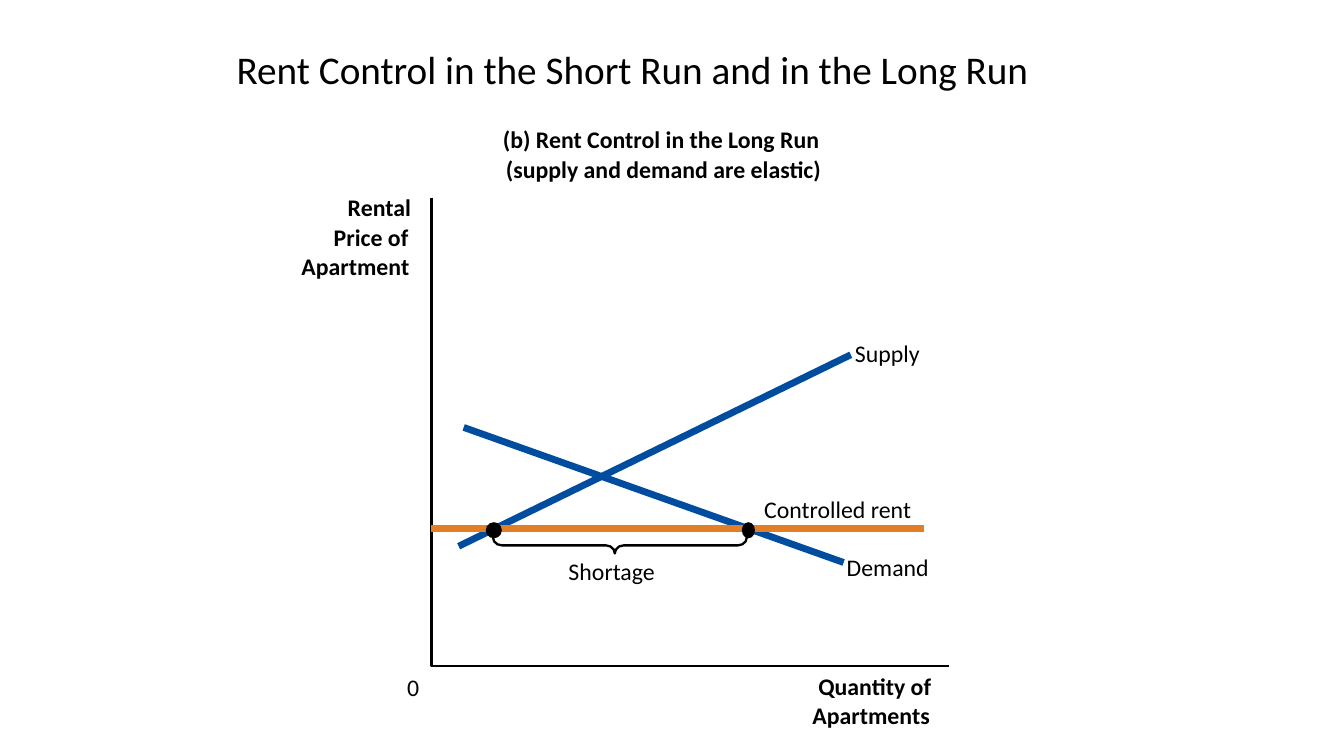
from lxml import etree
from pptx import Presentation
from pptx.dml.color import RGBColor
from pptx.enum.shapes import MSO_CONNECTOR as Link, MSO_SHAPE as Preset
from pptx.enum.text import MSO_ANCHOR as Anchor, MSO_AUTO_SIZE as AutoSize
from pptx.oxml.ns import qn
from pptx.util import Pt

COLORS = {"ink": "000000", "curve": "004C9F", "rent": "E17E26"}
THIN, THICK = 1.63, 4.88
LABEL_FRAME = {
    "margin_left": 0, "margin_top": 0, "margin_right": 0, "margin_bottom": 0,
    "word_wrap": False, "auto_size": AutoSize.SHAPE_TO_FIT_TEXT,
}
TITLE_FRAME = {"word_wrap": True, "vertical_anchor": Anchor.MIDDLE}


def assign(target, values):
    for name, value in values.items():
        setattr(target, name, value)


class Diagram:
    """Draws the parts of an economics diagram on one slide."""

    font_name = "Calibri"

    def __init__(self, slide):
        self.shapes = slide.shapes

    def color(self, name):
        return RGBColor.from_string(COLORS[name])

    def stroke(self, line, color, width):
        line.color.rgb = self.color(color)
        line.width = Pt(width)

    def text(self, words, box, frame_format, size=17, bold=False, spacing=1.0):
        frame = self.shapes.add_textbox(*map(Pt, box)).text_frame
        assign(frame, frame_format)
        paragraph = frame.paragraphs[0]
        paragraph.line_spacing = spacing
        run = paragraph.add_run()
        run.text = words
        assign(run.font, {"name": self.font_name, "size": Pt(size), "bold": bold})
        run.font.color.rgb = self.color("ink")

    def label(self, words, left, top, width, bold=False):
        self.text(words, (left, top, width, 20.75), LABEL_FRAME, bold=bold)

    def axes(self, left, top, right, bottom):
        builder = self.shapes.build_freeform(Pt(left), Pt(top))
        corners = [(left, bottom), (right, bottom)]
        builder.add_line_segments([(Pt(x), Pt(y)) for x, y in corners], close=False)
        outline = builder.convert_to_shape()
        outline.shadow.inherit = False
        outline.fill.background()
        self.stroke(outline.line, "ink", THIN)

    def curve(self, start, end, color):
        segment = self.shapes.add_connector(Link.STRAIGHT, *map(Pt, (*start, *end)))
        self.stroke(segment.line, color, THICK)
        etree.SubElement(segment._element.spPr, qn("a:effectLst"))

    def brace(self, left, top, length, depth, tip):
        middle_x, middle_y = left + length / 2, top + depth / 2
        box = (middle_x - depth / 2, middle_y - length / 2, depth, length)
        bracket = self.shapes.add_shape(Preset.LEFT_BRACE, *map(Pt, box))
        bracket.rotation = 270
        bracket.adjustments[0] = 0.55
        bracket.adjustments[1] = tip
        bracket.shadow.inherit = False
        bracket.fill.background()
        self.stroke(bracket.line, "ink", THIN)

    def dot(self, left, top, width, height):
        point = self.shapes.add_shape(Preset.OVAL, *map(Pt, (left, top, width, height)))
        point.shadow.inherit = False
        point.fill.solid()
        point.fill.fore_color.rgb = self.color("ink")
        point.line.fill.background()


def main():
    deck = Presentation()
    assign(deck, {"slide_width": Pt(960), "slide_height": Pt(540)})
    diagram = Diagram(deck.slides.add_slide(deck.slide_layouts[6]))

    diagram.text("Rent Control in the Short Run and in the Long Run",
                 (162, 27.4, 636.5, 50.4), TITLE_FRAME, size=28, spacing=0.8)
    diagram.axes(308.2, 141.1, 678.2, 475.9)

    headings = [
        ("(b) Rent Control in the Long Run", 359.3, 89.3, 228.2),
        ("(supply and demand are elastic)", 361.4, 110.2, 226.8),
        ("Rental", 248.4, 137.5, 45.4),
        ("Price of", 238.3, 159.1, 54),
        ("Apartment", 215.3, 180, 77.8),
        ("Quantity of", 584.6, 479.5, 81.4),
        ("Apartments", 580.3, 500.4, 84.2),
    ]
    for heading in headings:
        diagram.label(*heading, bold=True)

    rent_level = 377.3
    curves = [
        ((331.2, 305.3), (602.6, 401.8), "curve"),
        ((327.6, 390.2), (607.7, 253.4), "curve"),
        ((660.2, rent_level), (308.2, rent_level), "rent"),
    ]
    for curve in curves:
        diagram.curve(*curve)

    diagram.brace(352.1, 383.8, 181.4, 11.5, tip=0.48)
    for left, width in [(347, 11.5), (529.9, 9.4)]:
        diagram.dot(left, 373, width, 11.5)

    labels = [
        ("0", 290.9, 480.2, 8.6),
        ("Demand", 604.8, 394.6, 59),
        ("Supply", 610.6, 241.9, 46.8),
        ("Controlled rent", 545.8, 353.5, 105.8),
        ("Shortage", 406.1, 397.4, 61.9),
    ]
    for label in labels:
        diagram.label(*label)

    deck.save("out.pptx")


if __name__ == "__main__":
    main()
